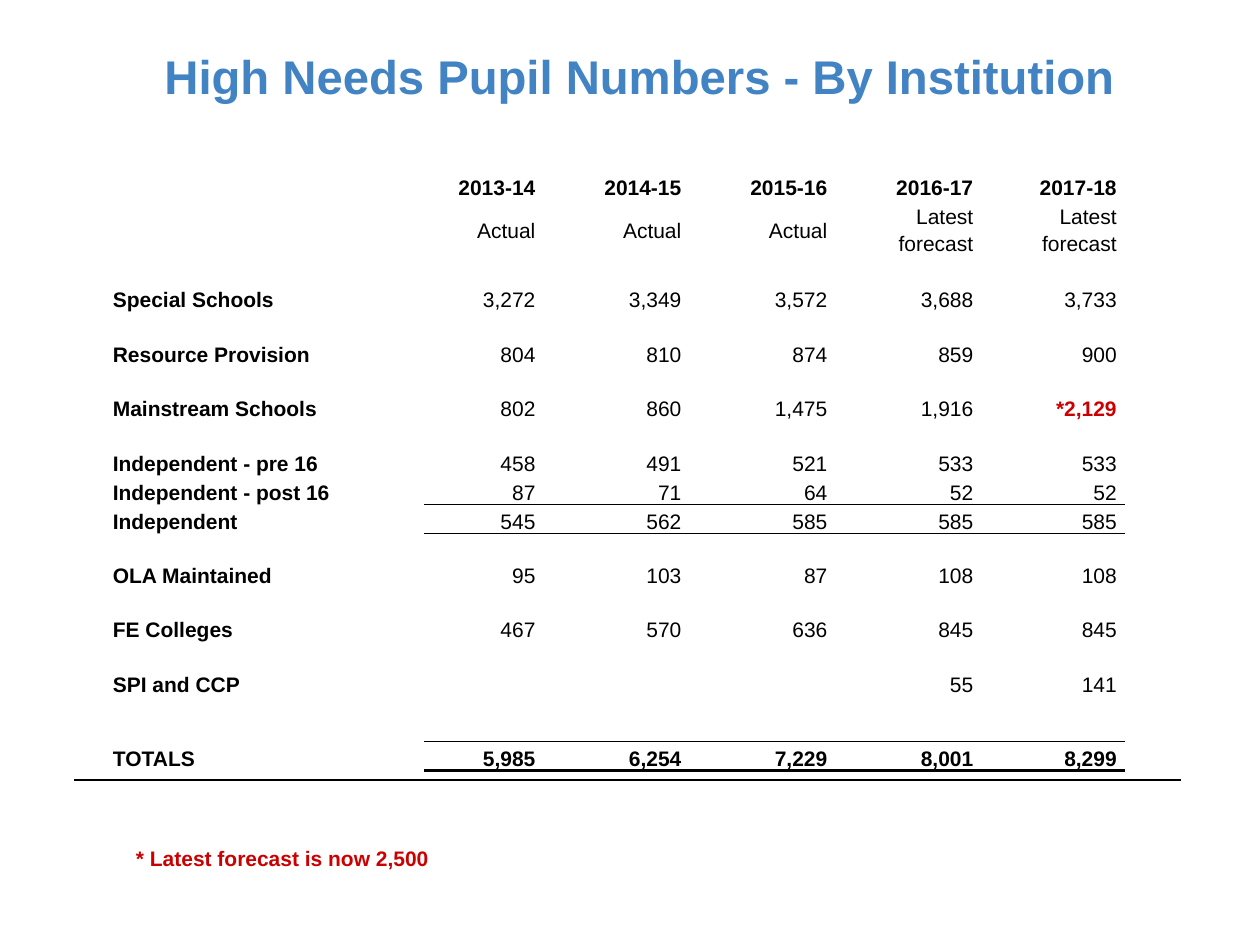
"""Builds a slide with a table of high needs pupil numbers by institution."""
import pptx
import pptx.dml.color
import pptx.enum.shapes
import pptx.enum.text
import pptx.oxml
import pptx.oxml.ns
import pptx.util

Pt = pptx.util.Pt
Align = pptx.enum.text.PP_ALIGN
Anchor = pptx.enum.text.MSO_ANCHOR

COLOURS = {"title": "4283C4", "text": "000000", "alert": "CC0000"}
NO_TABLE_STYLE = "{2D5ABB26-0587-4C30-8999-92F81FD0307C}"

LINE, GAP = 16, 14.5
COLUMNS = [183, 68.5, 83.4, 83.4, 83.4, 82]
SPACER = (GAP, [])
ROWS = [
    (31.7, []),
    (LINE, ["", "2013-14", "2014-15", "2015-16", "2016-17", "2017-18"]),
    (2 * LINE, ["", "Actual", "Actual", "Actual", "Latest forecast", "Latest forecast"]),
    SPACER,
    (LINE, ["Special Schools", "3,272", "3,349", "3,572", "3,688", "3,733"]),
    SPACER,
    (LINE, ["Resource Provision", "804", "810", "874", "859", "900"]),
    SPACER,
    (LINE, ["Mainstream Schools", "802", "860", "1,475", "1,916", "*2,129"]),
    SPACER,
    (LINE, ["Independent - pre 16", "458", "491", "521", "533", "533"]),
    (LINE, ["Independent - post 16", "87", "71", "64", "52", "52"]),
    (LINE, ["Independent", "545", "562", "585", "585", "585"]),
    SPACER,
    (LINE, ["OLA Maintained", "95", "103", "87", "108", "108"]),
    SPACER,
    (LINE, ["FE Colleges", "467", "570", "636", "845", "845"]),
    SPACER,
    (LINE, ["SPI and CCP", "", "", "", "55", "141"]),
    (25.7, []),
    (LINE, ["TOTALS", "5,985", "6,254", "7,229", "8,001", "8,299"]),
]
HEADER_ROW, STATUS_ROW, POST_16_ROW, TOTALS_ROW = 1, 2, 11, 20
BORDERS = {
    POST_16_ROW: {"lnB": 1},
    POST_16_ROW + 1: {"lnT": 1},
    TOTALS_ROW - 1: {"lnB": 1},
    TOTALS_ROW: {"lnT": 1, "lnB": 2.25},
}


class Painter:
    """Holds the style and the page being drawn."""

    def __init__(self, page, font="Arial", size=12):
        self.page = page
        self.font = font
        self.size = size

    def apply(self, target, values):
        for name, value in values.items():
            setattr(target, name, value)

    def add_span(self, para, text, colour="text", size=None, bold=True):
        span = para.add_run()
        span.text = text
        self.apply(span.font, {"name": self.font, "size": Pt(size or self.size), "bold": bold})
        span.font.color.rgb = pptx.dml.color.RGBColor.from_string(COLOURS[colour])

    def text(self, place, text, colour, size=None, align=Align.LEFT, anchor=Anchor.TOP):
        box = self.page.shapes.add_textbox(*map(Pt, place))
        self.apply(box.text_frame, {"word_wrap": True, "vertical_anchor": anchor})
        para = box.text_frame.paragraphs[0]
        para.alignment = align
        self.add_span(para, text, colour, size)

    def rule(self, left, right, top):
        straight = pptx.enum.shapes.MSO_CONNECTOR.STRAIGHT
        line = self.page.shapes.add_connector(straight, Pt(left), Pt(top), Pt(right), Pt(top))
        line.line.width = Pt(1)
        line.line.color.rgb = pptx.dml.color.RGBColor.from_string(COLOURS["text"])
        line._element.spPr.append(self.element("<a:effectLst {ns}/>"))

    def element(self, markup):
        return pptx.oxml.parse_xml(markup.format(ns=pptx.oxml.ns.nsdecls("a")))

    def border(self, cell, side, width):
        cell._tc.get_or_add_tcPr().append(self.element(
            f'<a:{side} {{ns}} w="{int(Pt(width))}"><a:solidFill>'
            f'<a:srgbClr val="{COLOURS["text"]}"/></a:solidFill></a:{side}>'))

    def fill_cell(self, cell, text, row, column):
        for side, width in BORDERS.get(row, {}).items():
            if column:
                self.border(cell, side, width)
        cell.fill.background()
        self.apply(cell, {
            "margin_left": Pt(5), "margin_right": Pt(5), "margin_top": 0, "margin_bottom": 0,
            "vertical_anchor": Anchor.MIDDLE if row == STATUS_ROW else Anchor.BOTTOM,
        })
        para = cell.text_frame.paragraphs[0]
        if not text:
            para._p.append(self.element(f'<a:endParaRPr {{ns}} sz="{self.size * 50}"/>'))
            return
        self.apply(para, {"alignment": Align.RIGHT if column else Align.LEFT, "line_spacing": 1.15})
        alert = text.startswith("*")
        bold = alert or column == 0 or row in (HEADER_ROW, TOTALS_ROW)
        self.add_span(para, text, "alert" if alert else "text", bold=bold)

    def table(self, left, top):
        heights = [height for height, _ in ROWS]
        frame = self.page.shapes.add_table(
            len(ROWS), len(COLUMNS), Pt(left), Pt(top), Pt(sum(COLUMNS)), Pt(sum(heights)))
        table = frame.table
        self.apply(table, {"first_row": False, "horz_banding": False})
        table._tbl.tblPr.find(pptx.oxml.ns.qn("a:tableStyleId")).text = NO_TABLE_STYLE
        for column, width in zip(table.columns, COLUMNS):
            column.width = Pt(width)
        for row, (height, texts) in enumerate(ROWS):
            table.rows[row].height = Pt(height)
            for column, text in enumerate(texts or [""] * len(COLUMNS)):
                self.fill_cell(table.cell(row, column), text, row, column)
        table.cell(0, 0).merge(table.cell(0, 1))


def main():
    deck = pptx.Presentation()
    deck.slide_width, deck.slide_height = Pt(720), Pt(540)
    painter = Painter(deck.slides.add_slide(deck.slide_layouts[6]))
    painter.rule(42.5, 674.6, 445.7)
    painter.text((59.5, 21, 612, 45), "High Needs Pupil Numbers - By Institution", "title",
                 27, Align.CENTER, Anchor.MIDDLE)
    painter.table(59.5, 66)
    painter.text((70.6, 479.5, 187, 21.6), "* Latest forecast is now 2,500", "alert")
    deck.save("out.pptx")


if __name__ == "__main__":
    main()
